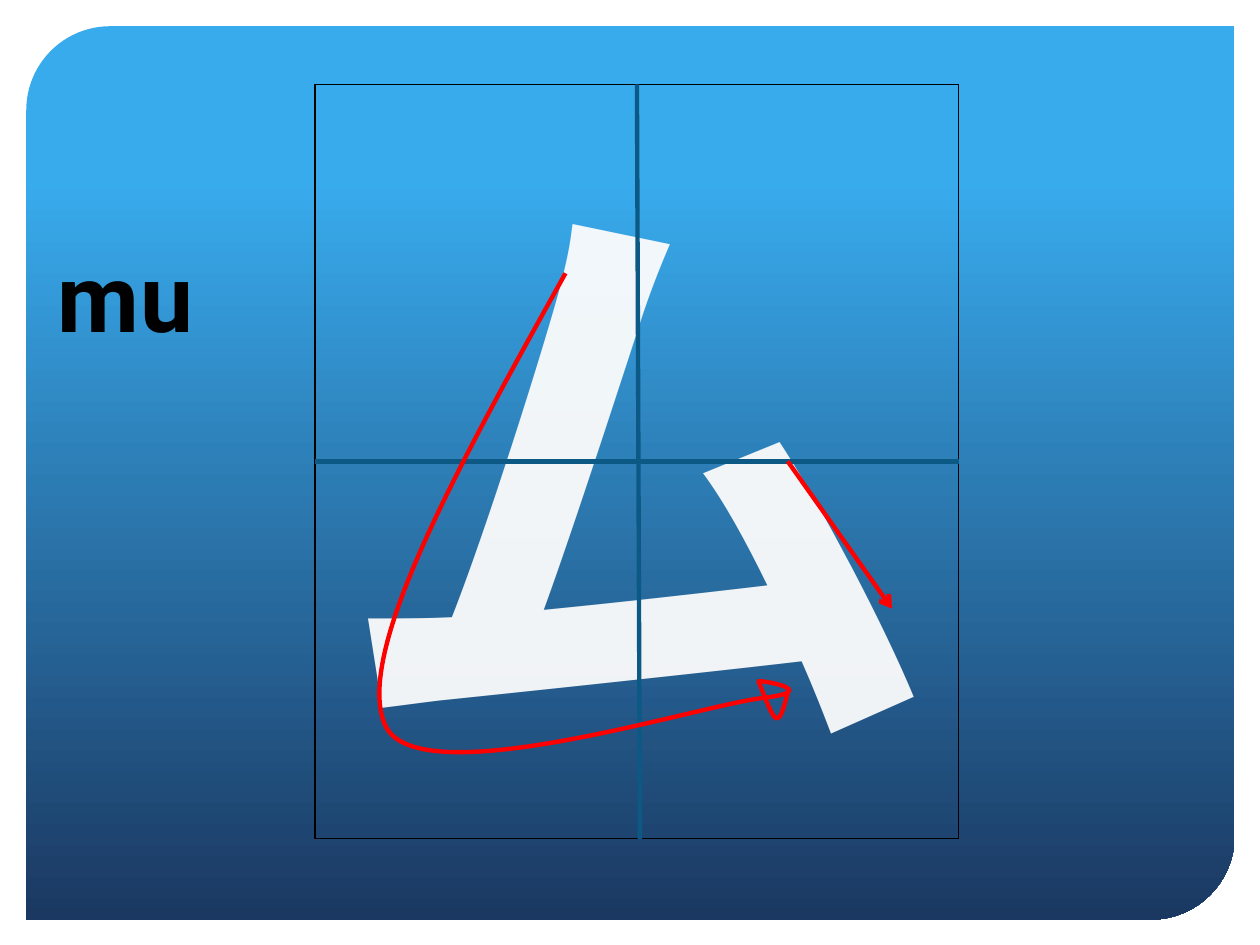
from typing import NamedTuple

from pptx import Presentation
from pptx.dml.color import RGBColor
from pptx.enum.shapes import MSO_CONNECTOR as Connector, MSO_SHAPE as Preset
from pptx.enum.text import MSO_ANCHOR as Anchor, MSO_AUTO_SIZE as AutoSize, PP_ALIGN as Align
from pptx.oxml.ns import qn
from pptx.oxml.xmlchemy import OxmlElement
from pptx.util import Cm, Pt

COLORS = {
    "sky": "38ABED",
    "navy": "1B3861",
    "frame": "000000",
    "guide": "0C5986",
    "stroke": "FF0000",
    "kana": "FCFCFC",
    "romaji": "000000",
    "outline": "02121B",
}
FRAME_FORMAT = {"word_wrap": False, "auto_size": AutoSize.SHAPE_TO_FIT_TEXT,
                "vertical_anchor": Anchor.MIDDLE}


class Box(NamedTuple):
    left: float
    top: float
    width: float
    height: float


class Label(NamedTuple):
    text: str
    size: float
    color: str
    alpha: int = 100000


class Stroke(NamedTuple):
    start: tuple
    end: tuple
    color: str
    joins: tuple = ()  # frame sides for begin and end
    arrow: bool = False


def rgb(name: str) -> RGBColor:
    return RGBColor.from_string(COLORS[name])


def lengths(values) -> list:
    return [Cm(value) for value in values]


def add_child(parent, tag: str, **attributes):
    child = OxmlElement(tag)
    for key, value in attributes.items():
        child.set(key, str(value))
    parent.append(child)
    return child


def set_line(line, color: str, width: float) -> None:
    line.color.rgb = rgb(color)
    line.width = Pt(width)


def write_label(shape, label: Label) -> None:
    frame = shape.text_frame
    for key, value in FRAME_FORMAT.items():
        setattr(frame, key, value)
    paragraph = frame.paragraphs[0]
    paragraph.alignment = Align.CENTER
    run = paragraph.add_run()
    run.text = label.text
    for key, value in {"name": "Roboto", "size": Pt(label.size), "bold": True}.items():
        setattr(run.font, key, value)
    run.font.color.rgb = rgb(label.color)

    # Letter spacing, fill opacity and faint outline
    properties = run.font._element
    properties.set("spc", "50")
    if label.alpha < 100000:
        add_child(next(properties.iter(qn("a:srgbClr"))), "a:alpha", val=label.alpha)
    outline = OxmlElement("a:ln")
    outline.set("w", str(Pt(1.06)))
    outline_color = add_child(add_child(outline, "a:solidFill"), "a:srgbClr",
                              val=COLORS["outline"])
    add_child(outline_color, "a:alpha", val=6000)
    properties.insert(0, outline)


def draw_stroke(shapes, stroke: Stroke, frame) -> None:
    connector = shapes.add_connector(Connector.STRAIGHT,
                                     *lengths(stroke.start + stroke.end))
    for join, side in zip((connector.begin_connect, connector.end_connect), stroke.joins):
        join(frame, side)
    set_line(connector.line, stroke.color, 2.5)
    if stroke.arrow:
        add_child(connector.line._get_or_add_ln(), "a:tailEnd", type="arrow")
    add_child(connector._element.spPr, "a:effectLst")


def draw_curve(shapes, points: list, color: str) -> None:
    """Draw cubic curves: a start, then two controls and an end for each curve."""
    start, *rest = [tuple(lengths(point)) for point in points]
    builder = shapes.build_freeform(*start)
    builder.add_line_segments(rest, close=False)
    curve = builder.convert_to_shape()
    outline = next(curve._element.iter(qn("a:path")))
    segments = outline.findall(qn("a:lnTo"))
    for first in range(0, len(segments), 3):
        bezier = add_child(outline, "a:cubicBezTo")
        for segment in segments[first:first + 3]:
            bezier.append(segment[0])
            outline.remove(segment)
    curve.fill.background()
    set_line(curve.line, color, 2.5)
    curve.shadow.inherit = False


PANEL = Box(0.53, 0.53, 24.36, 18.01)
KANA_FRAME = Box(6.35, 1.7, 12.98, 15.21)
ROMAJI = Box(0.84, 4.65, 3.38, 2.57)
MIDDLE_X = KANA_FRAME.left + KANA_FRAME.width / 2
MIDDLE_Y = KANA_FRAME.top + KANA_FRAME.height / 2
RIGHT = KANA_FRAME.left + KANA_FRAME.width
BOTTOM = KANA_FRAME.top + KANA_FRAME.height

GUIDES = [
    Stroke((MIDDLE_X, KANA_FRAME.top), (12.9, BOTTOM), "guide", joins=(0,)),
    Stroke((KANA_FRAME.left, MIDDLE_Y), (RIGHT, MIDDLE_Y), "guide", joins=(1, 3)),
]
FIRST_STROKE = [
    (11.4, 5.51),
    (9.25, 9.37), (7.11, 13.21), (7.77, 14.63),
    (8.43, 16.05), (14.15, 14.2), (15.39, 14.07),
    (16.64, 13.92), (15.24, 13.69), (15.29, 13.74),
    (15.34, 13.82), (15.54, 14.45), (15.65, 14.48),
    (15.75, 14.5), (15.82, 14.2), (15.9, 13.89),
]
SECOND_STROKE = Stroke((15.88, 9.3), (17.98, 12.27), "stroke", arrow=True)


def main() -> None:
    deck = Presentation()
    deck.slide_width, deck.slide_height = Cm(25.4), Cm(19.05)
    shapes = deck.slides.add_slide(deck.slide_layouts[6]).shapes

    # Background panel
    panel = shapes.add_shape(Preset.ROUND_2_DIAG_RECTANGLE, *lengths(PANEL))
    panel.adjustments[0], panel.adjustments[1] = 0.094, 0
    panel.fill.gradient()
    panel.fill.gradient_angle = 270
    for stop, (color, position) in zip(panel.fill.gradient_stops,
                                       [("sky", 0.17), ("navy", 1)]):
        stop.color.rgb = rgb(color)
        stop.position = position
    panel.line.fill.background()
    panel.shadow.inherit = False

    # Kana in its frame
    kana = shapes.add_shape(Preset.RECTANGLE, *lengths(KANA_FRAME))
    kana.fill.background()
    set_line(kana.line, "frame", 0.75)
    kana.shadow.inherit = False
    write_label(kana, Label("ム", 350, "kana", 95000))

    # Guide lines
    for guide in GUIDES:
        draw_stroke(shapes, guide, kana)

    # Reading
    romaji = shapes.add_textbox(*lengths(ROMAJI))
    write_label(romaji, Label("mu", 54, "romaji"))

    # Stroke order
    draw_curve(shapes, FIRST_STROKE, "stroke")
    draw_stroke(shapes, SECOND_STROKE, kana)

    deck.save("out.pptx")


if __name__ == "__main__":
    main()
